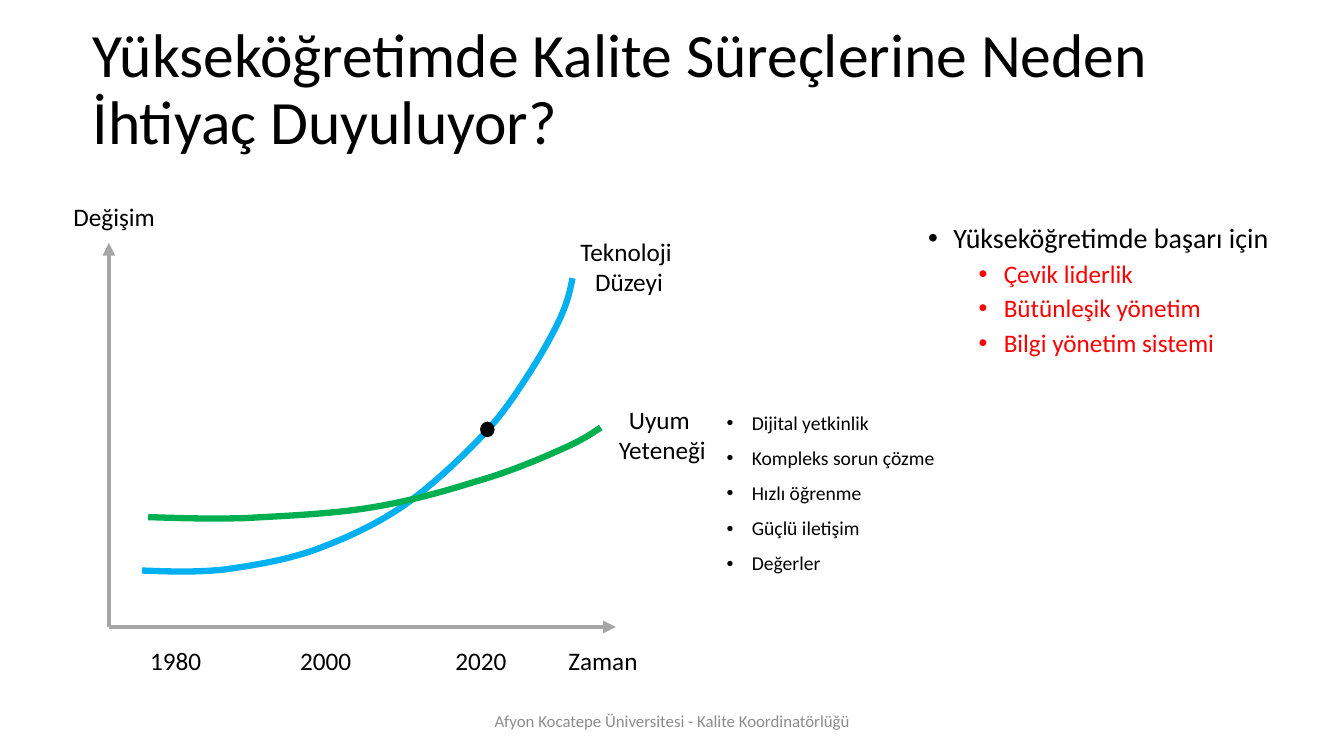
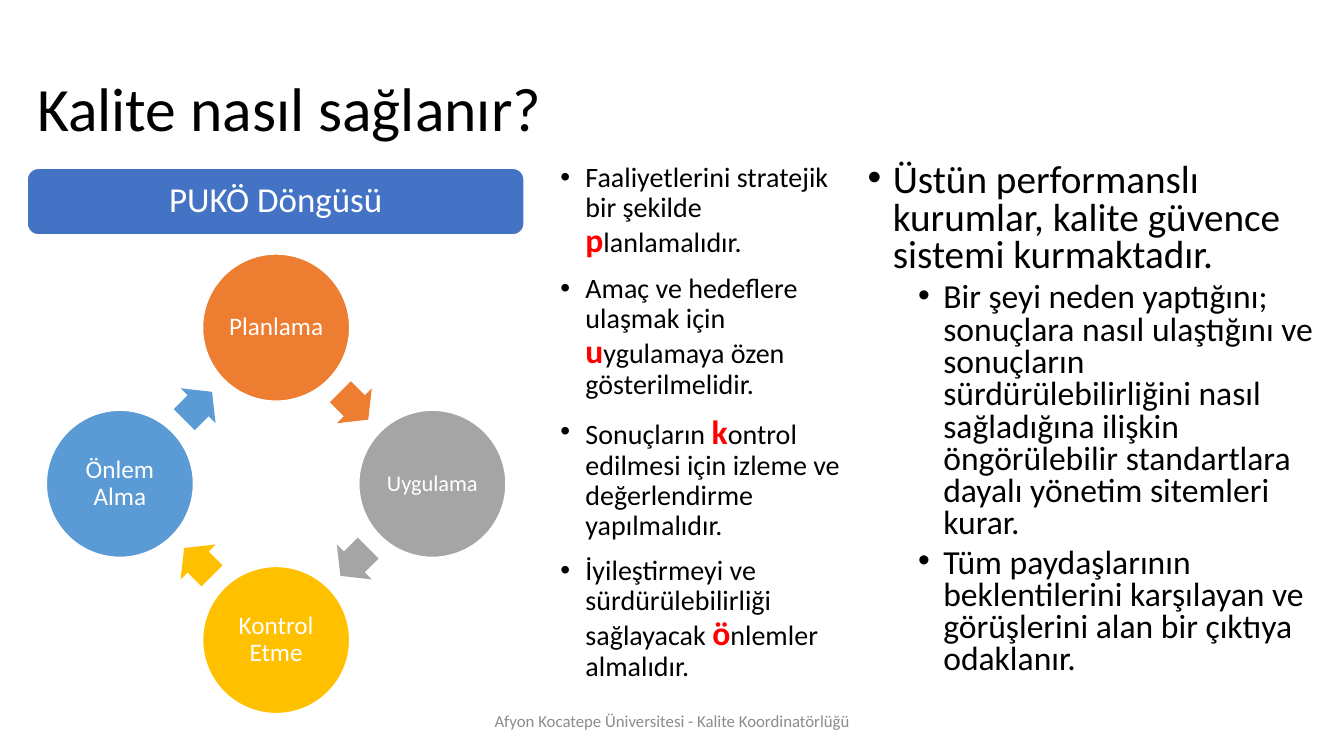
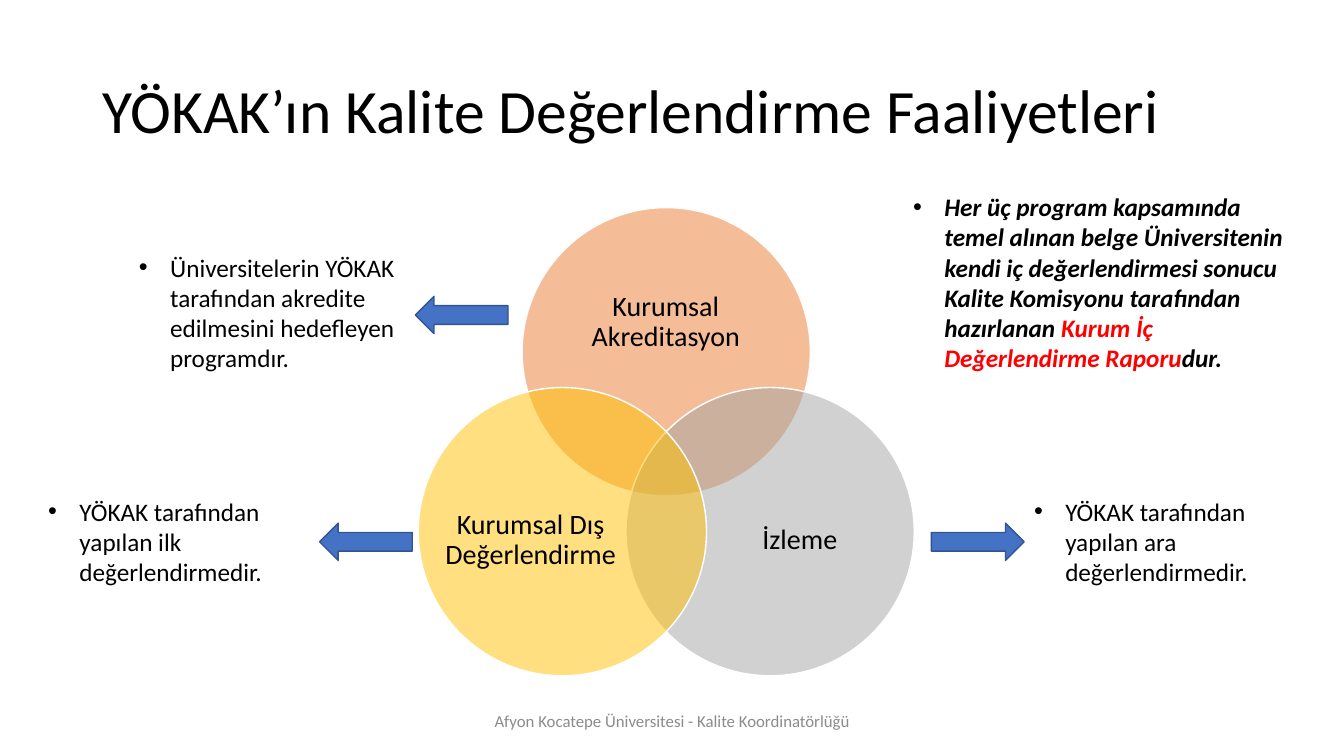
"""Build three slides on quality processes in higher education."""
from dataclasses import dataclass, replace
from math import cos, radians, sin, sqrt
from typing import NamedTuple, Optional

from lxml import etree
from pptx import Presentation
from pptx.dml.color import RGBColor
from pptx.enum.shapes import MSO_CONNECTOR, MSO_SHAPE
from pptx.enum.text import MSO_ANCHOR, PP_ALIGN
from pptx.oxml.ns import qn
from pptx.shapes.autoshape import Shape
from pptx.slide import Slide
from pptx.text.text import TextFrame
from pptx.util import Inches, Pt

FONT = "Calibri"
FOOTER = "Afyon Kocatepe Üniversitesi - Kalite Koordinatörlüğü"
BLACK = RGBColor(0x00, 0x00, 0x00)
WHITE = RGBColor(0xFF, 0xFF, 0xFF)
RED = RGBColor(0xFF, 0x00, 0x00)
MUTED = RGBColor(0x8C, 0x8C, 0x8C)
AXIS = RGBColor(0xA6, 0xA6, 0xA6)
SKY = RGBColor(0x00, 0xB0, 0xF0)
GREEN = RGBColor(0x00, 0xB0, 0x50)
ORANGE = RGBColor(0xED, 0x7D, 0x31)
GRAY = RGBColor(0xA5, 0xA5, 0xA5)
GOLD = RGBColor(0xFF, 0xC0, 0x00)
AZURE = RGBColor(0x5B, 0x9B, 0xD5)
BLUE = RGBColor(0x44, 0x72, 0xC4)
NAVY = RGBColor(0x32, 0x54, 0x91)
LEFT, CENTER = PP_ALIGN.LEFT, PP_ALIGN.CENTER
TOP, MIDDLE = MSO_ANCHOR.TOP, MSO_ANCHOR.MIDDLE
OVAL, ROUND = MSO_SHAPE.OVAL, MSO_SHAPE.ROUNDED_RECTANGLE
TO_LEFT, TO_RIGHT = MSO_SHAPE.LEFT_ARROW, MSO_SHAPE.RIGHT_ARROW
STRAIGHT = MSO_CONNECTOR.STRAIGHT


class Point(NamedTuple):
    """Place in inches."""
    x: float
    y: float


class Box(NamedTuple):
    """Frame in inches."""
    x: float
    y: float
    w: float
    h: float


@dataclass(frozen=True)
class Para:
    """Paragraph whose parts between bars are accented in red."""
    text: str
    size: float = 18
    color: RGBColor = BLACK
    align: PP_ALIGN = LEFT
    line: Optional[float] = None
    gap: float = 0
    left: float = 0
    hang: float = 0
    peak: Optional[float] = None
    strong: bool = False


@dataclass(frozen=True)
class Node:
    """Coloured circle with a label."""
    text: str
    color: RGBColor
    size: float = 18
    label: Optional[Box] = None


@dataclass(frozen=True)
class Curve:
    """Chain of cubic Bezier arcs."""
    color: RGBColor
    knots: tuple[tuple[float, float], ...]


ITEM = Para("", line=0.9, gap=10, left=0.25, hang=0.25)
SUB = replace(ITEM, gap=5, left=0.75)
NOTE = Para("", left=0.31, hang=0.31)

TREND = Curve(SKY, (
    (1.41, 5.66), (1.67, 5.67), (1.94, 5.68), (2.23, 5.65), (2.51, 5.61),
    (2.82, 5.56), (3.11, 5.46), (3.41, 5.35), (3.7, 5.22), (3.97, 5.04),
    (4.25, 4.85), (4.56, 4.56), (4.77, 4.34), (4.98, 4.12), (5.11, 3.92),
    (5.24, 3.72), (5.37, 3.52), (5.5, 3.29), (5.57, 3.13), (5.64, 2.97),
    (5.66, 2.86), (5.68, 2.76)))
SKILL = Curve(GREEN, (
    (1.47, 5.13), (1.77, 5.14), (2.07, 5.15), (2.43, 5.14), (2.79, 5.12),
    (3.27, 5.1), (3.65, 5.04), (4.03, 4.98), (4.39, 4.88), (4.71, 4.78),
    (5.03, 4.69), (5.34, 4.56), (5.54, 4.47), (5.75, 4.38), (5.86, 4.31),
    (5.96, 4.24)))


def many(base: Para, *texts: str) -> list[Para]:
    """Give each text the same style."""
    return [replace(base, text=text) for text in texts]


def write(frame: TextFrame, paras: list[Para], anchor: MSO_ANCHOR = TOP,
          wrap: bool = True, inset: Optional[float] = None) -> None:
    """Fill a text frame with styled paragraphs."""
    frame.word_wrap = wrap
    frame.vertical_anchor = anchor
    if inset is not None:
        frame.margin_left = frame.margin_right = Inches(inset)
        frame.margin_top = frame.margin_bottom = Inches(inset)
    for rank, item in enumerate(paras):
        para = frame.add_paragraph() if rank else frame.paragraphs[0]
        para.alignment = item.align
        para.space_before = Pt(item.gap)
        if item.line:
            para.line_spacing = item.line
        if item.hang:
            props = para._p.get_or_add_pPr()
            props.set("marL", str(Inches(item.left)))
            props.set("indent", str(-Inches(item.hang)))
            etree.SubElement(props, qn("a:buFont"), typeface="Arial")
            etree.SubElement(props, qn("a:buChar"), char="•")
        for turn, part in enumerate(item.text.split("|")):
            hot = turn % 2 == 1
            run = para.add_run()
            run.text = part
            font = run.font
            font.name = FONT
            font.size = Pt(item.peak if hot and item.peak else item.size)
            font.bold = hot or item.strong
            font.italic = item.strong
            font.color.rgb = RED if hot else item.color


def label(slide: Slide, box: Box, paras: list[Para], anchor: MSO_ANCHOR = TOP,
          wrap: bool = True, inset: Optional[float] = None) -> None:
    """Add a text box."""
    area = slide.shapes.add_textbox(*map(Inches, box))
    write(area.text_frame, paras, anchor, wrap, inset)


def draw(slide: Slide, kind: MSO_SHAPE, box: Box, color: RGBColor,
         edge: Optional[RGBColor] = WHITE, alpha: int = 100) -> Shape:
    """Add a filled preset shape."""
    shape = slide.shapes.add_shape(kind, *map(Inches, box))
    shape.shadow.inherit = False
    shape.fill.solid()
    shape.fill.fore_color.rgb = color
    if alpha < 100:
        tint = shape.fill._xPr.find(qn("a:solidFill"))[0]
        etree.SubElement(tint, qn("a:alpha"), val=str(alpha * 1000))
    if edge is None:
        shape.line.fill.background()
    else:
        shape.line.color.rgb = edge
        shape.line.width = Pt(1)
    return shape


def around(mid: Point, angle: float, reach: float, w: float, h: float) -> Box:
    """Centre a box at an angle and distance from a point."""
    turn = radians(angle)
    return Box(mid.x + reach * cos(turn) - w / 2,
               mid.y + reach * sin(turn) - h / 2, w, h)


def axis(slide: Slide, start: Point, end: Point) -> None:
    """Add an axis with an arrowhead."""
    line = slide.shapes.add_connector(STRAIGHT, *map(Inches, start + end))
    line.line.color.rgb = AXIS
    line.line.width = Pt(3)
    etree.SubElement(line.line._get_or_add_ln(), qn("a:tailEnd"), type="triangle")
    etree.SubElement(line._element.spPr, qn("a:effectLst"))


def trace(slide: Slide, curve: Curve) -> None:
    """Add a smooth open curve by turning each three segments into one arc."""
    first, *rest = [tuple(map(Inches, knot)) for knot in curve.knots]
    pen = slide.shapes.build_freeform(*first, scale=1.0)
    pen.add_line_segments(rest, close=False)
    shape = pen.convert_to_shape()
    legs = list(shape._element.iter(qn("a:lnTo")))
    for rank in range(0, len(legs), 3):
        arc, *tail = legs[rank:rank + 3]
        arc.tag = qn("a:cubicBezTo")
        for leg in tail:
            arc.append(leg[0])
            leg.getparent().remove(leg)
    shape.shadow.inherit = False
    shape.fill.background()
    shape.line.color.rgb = curve.color
    shape.line.width = Pt(4.5)


def start(deck: Presentation, title: str, x: float, y: float) -> Slide:
    """Add a slide with its title and footer."""
    slide = deck.slides.add_slide(deck.slide_layouts[6])
    label(slide, Box(x, y, 11.5, 1.45), [Para(title, 44, line=0.9)], MIDDLE)
    label(slide, Box(4.42, 6.95, 4.5, 0.4),
          [Para(FOOTER, 12, MUTED, CENTER)], MIDDLE)
    return slide


def need(deck: Presentation) -> None:
    """Build the slide on change over time."""
    slide = start(deck, "Yükseköğretimde Kalite Süreçlerine Neden İhtiyaç Duyuluyor?",
                  0.82, 0.18)
    label(slide, Box(7.11, 4.05, 2.28, 1.75), many(
        replace(ITEM, size=14), "Dijital yetkinlik", "Kompleks sorun çözme",
        "Hızlı öğrenme", "Güçlü iletişim", "Değerler"))
    zero = Point(1.08, 6.22)
    for end in (Point(zero.x, 2.41), Point(6.11, zero.y)):
        axis(slide, zero, end)
    plain, mid = Para(""), Para("", align=CENTER)
    for box, paras in (
            (Box(5.54, 6.35, 0.89, 0.4), many(plain, "Zaman")),
            (Box(0.63, 1.95, 1.02, 0.4), many(plain, "Değişim")),
            (Box(5.65, 2.29, 1.18, 0.71), many(mid, "Teknoloji ", "Düzeyi")),
            (Box(6.03, 3.96, 1.08, 0.71), many(mid, "Uyum ", "Yeteneği")),
            (Box(1.39, 6.35, 0.71, 0.4), many(plain, "1980")),
            (Box(2.88, 6.35, 0.71, 0.4), many(plain, "2000")),
            (Box(4.42, 6.35, 0.71, 0.4), many(plain, "2020"))):
        label(slide, box, paras, wrap=False)
    for curve in (TREND, SKILL):
        trace(slide, curve)
    draw(slide, OVAL, Box(4.77, 4.19, 0.13, 0.14), BLACK, BLACK)
    label(slide, Box(9.11, 2.18, 3.92, 1.63),
          many(replace(ITEM, size=20), "Yükseköğretimde başarı için")
          + many(replace(SUB, color=RED), "Çevik liderlik",
                 "Bütünleşik yönetim", "Bilgi yönetim sistemi"))


def cycle(deck: Presentation) -> None:
    """Build the slide on the quality cycle."""
    slide = start(deck, "Kalite nasıl sağlanır?", 0.27, 0.38)
    label(slide, Box(8.51, 1.57, 4.82, 5.78),
          many(replace(ITEM, size=28, line=0.8),
               "Üstün performanslı kurumlar, kalite güvence sistemi kurmaktadır.")
          + many(replace(SUB, size=24, line=0.8),
                 "Bir şeyi neden yaptığını; sonuçlara nasıl ulaştığını ve "
                 "sonuçların sürdürülebilirliğini nasıl sağladığına ilişkin "
                 "öngörülebilir standartlara dayalı yönetim sitemleri kurar.",
                 "Tüm paydaşlarının beklentilerini karşılayan ve görüşlerini "
                 "alan bir çıktıya odaklanır."))
    hub, reach = Point(2.74, 4.8), 1.55
    nodes = (Node("Planlama", ORANGE), Node("Uygulama", GRAY, 16),
             Node("Kontrol Etme", GOLD), Node("Önlem Alma", AZURE))
    for rank, node in enumerate(nodes):
        angle = 90 * rank - 90
        disc = draw(slide, OVAL, around(hub, angle, reach, 1.46, 1.46), node.color)
        write(disc.text_frame, [Para(node.text, node.size, WHITE, CENTER, 0.9)],
              MIDDLE, inset=0.03)
        arrow = draw(slide, TO_RIGHT,
                     around(hub, angle + 45, reach / sqrt(2), 0.39, 0.49),
                     node.color, None)
        arrow.rotation = angle + 135
        arrow.adjustments[0] = 0.6
        arrow.adjustments[1] = 0.5
    head = draw(slide, ROUND, Box(0.27, 1.67, 4.93, 0.66), BLUE)
    write(head.text_frame, [Para("PUKÖ Döngüsü", 25, WHITE, CENTER, 0.9)],
          MIDDLE, inset=0.1)
    label(slide, Box(5.46, 1.57, 3.01, 5.78), many(
        replace(ITEM, size=20, peak=24),
        "Faaliyetlerini stratejik bir şekilde |p|lanlamalıdır.",
        "Amaç ve hedeflere ulaşmak için |u|ygulamaya özen gösterilmelidir.",
        "Sonuçların |k|ontrol edilmesi için izleme ve değerlendirme yapılmalıdır.",
        "İyileştirmeyi ve sürdürülebilirliği sağlayacak |ö|nlemler almalıdır."))


def review(deck: Presentation) -> None:
    """Build the slide on review programmes."""
    slide = start(deck, "YÖKAK’ın Kalite Değerlendirme Faaliyetleri", 0.92, 0.4)
    hub = Point(6.61, 4.68)
    nodes = (Node("Kurumsal Akreditasyon", ORANGE, 20, Box(5.56, 2.56, 2.09, 1.28)),
             Node("İzleme", GRAY, 20, Box(7.08, 4.58, 1.71, 1.57)),
             Node("Kurumsal Dış Değerlendirme", GOLD, 20,
                  Box(4.41, 4.58, 1.71, 1.57)))
    for rank, node in enumerate(nodes):
        draw(slide, OVAL, around(hub, 120 * rank - 90, 1.19, 2.86, 2.86),
             node.color, alpha=50)
        label(slide, node.label,
              [Para(node.text, node.size, align=CENTER, line=0.9)], MIDDLE, inset=0)
    for kind, x, y in ((TO_LEFT, 3.17, 5.19), (TO_RIGHT, 9.24, 5.19),
                       (TO_LEFT, 4.12, 2.94)):
        draw(slide, kind, Box(x, y, 0.92, 0.37), BLUE, NAVY)
    for box, text in (
            (Box(0.38, 4.87, 2.95, 1.01),
             "YÖKAK tarafından yapılan ilk değerlendirmedir."),
            (Box(10.16, 4.87, 2.98, 1.01),
             "YÖKAK tarafından yapılan ara değerlendirmedir."),
            (Box(1.28, 2.45, 2.95, 1.31),
             "Üniversitelerin YÖKAK tarafından akredite edilmesini "
             "hedefleyen programdır.")):
        label(slide, box, many(NOTE, text))
    label(slide, Box(8.96, 1.85, 3.91, 1.92), many(
        replace(NOTE, strong=True),
        "Her üç program kapsamında temel alınan belge Üniversitenin kendi iç "
        "değerlendirmesi sonucu Kalite Komisyonu tarafından hazırlanan "
        "|Kurum İç Değerlendirme Raporu|dur."))


def main() -> None:
    """Build and save the deck."""
    deck = Presentation()
    deck.slide_width, deck.slide_height = Inches(40 / 3), Inches(7.5)
    for build in (need, cycle, review):
        build(deck)
    deck.save("out.pptx")


if __name__ == "__main__":
    main()
